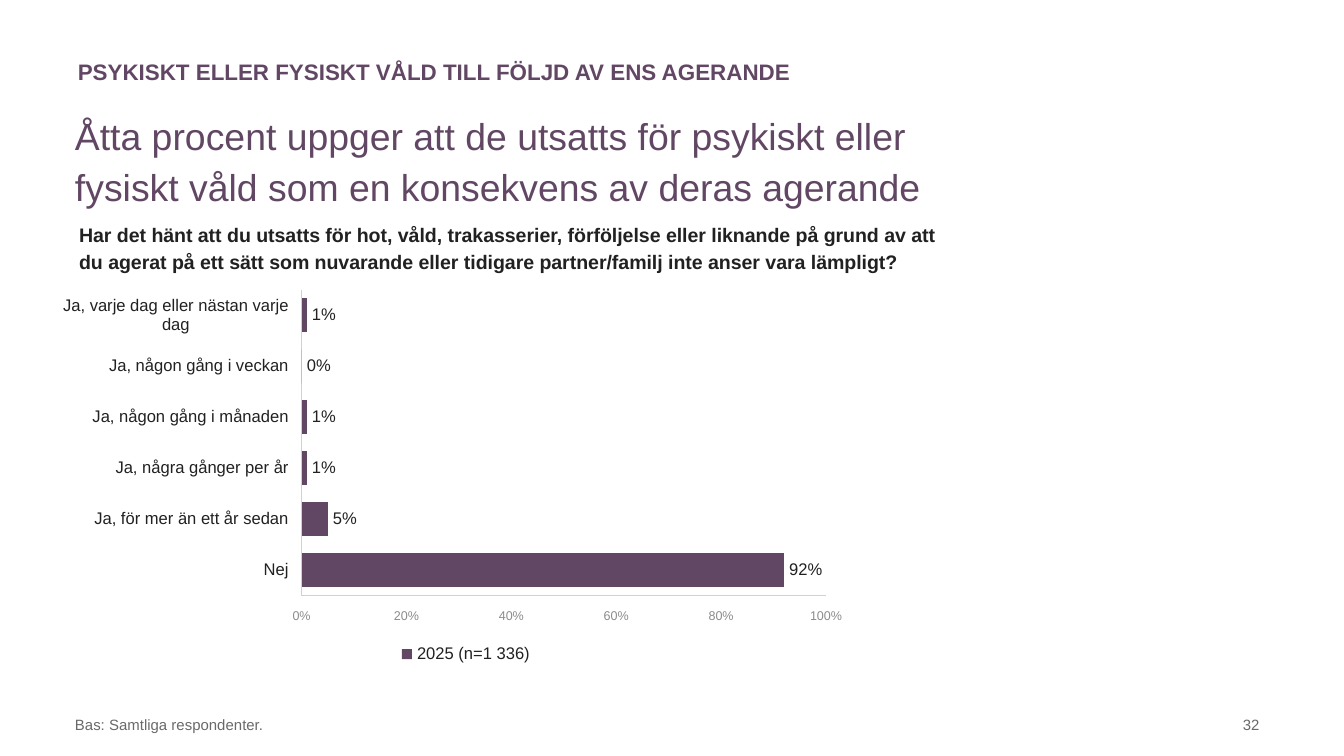
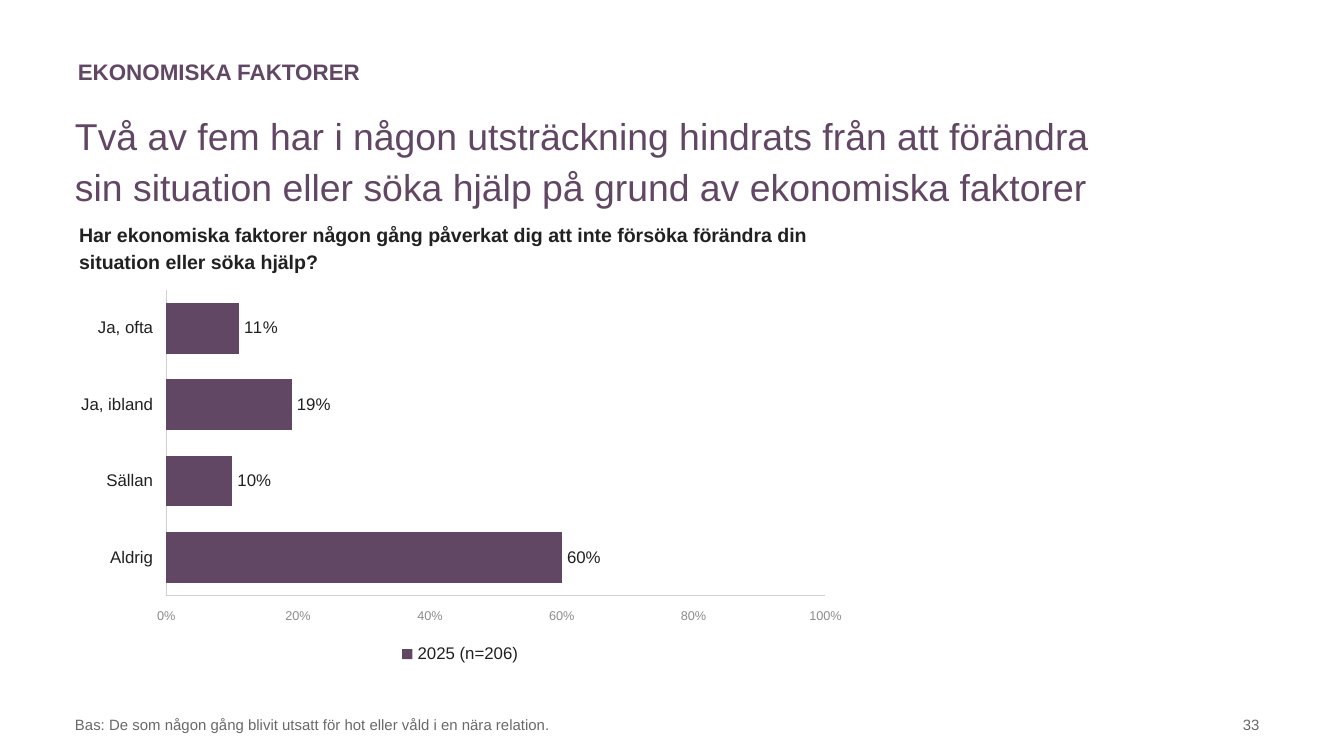
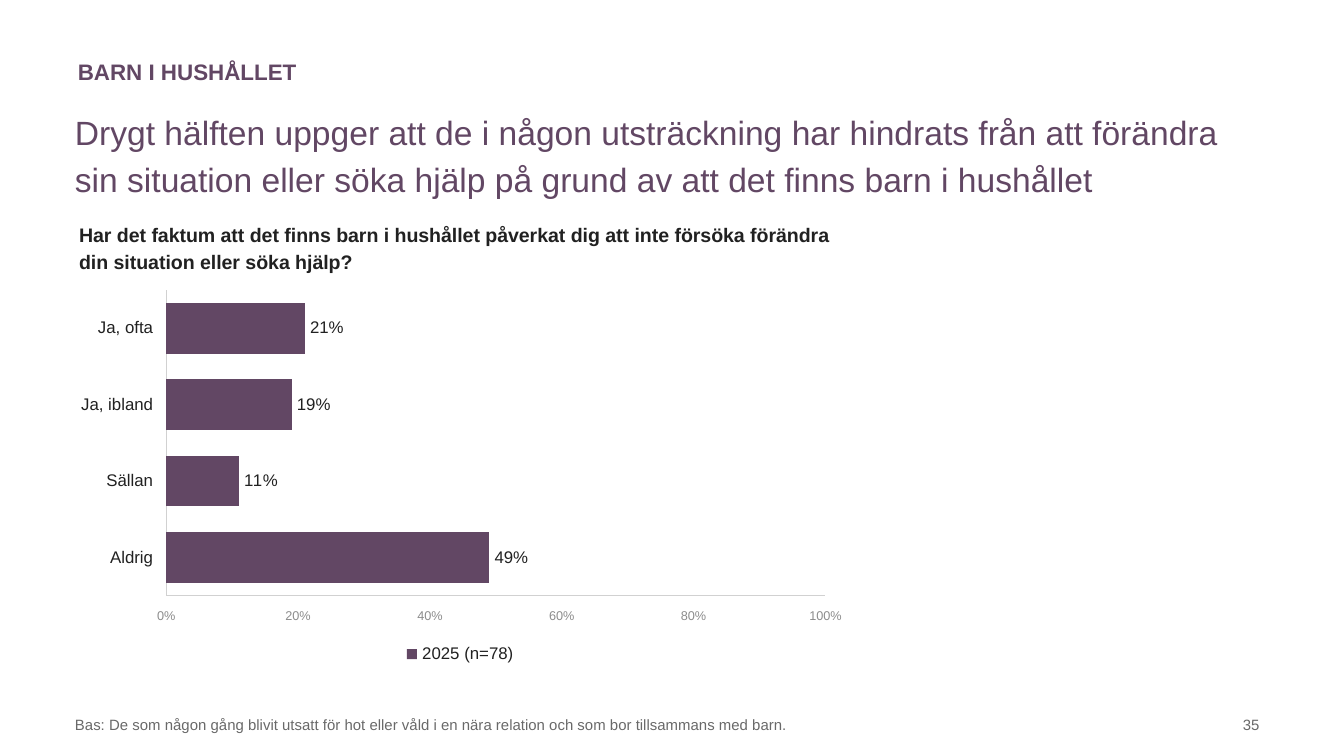
import pptx
import pptx.chart.data
import pptx.dml.color
import pptx.enum.chart
import pptx.enum.text
import pptx.oxml
import pptx.oxml.ns
import pptx.util
from collections import namedtuple

Pt = pptx.util.Pt
Box = namedtuple("Box", "left top width height")
Survey = namedtuple(
    "Survey",
    "heading title title_width title_size question question_width base number series answers plot_left",
)

FONT = "Arial"
PURPLE = "624764"
INK = "212121"
GREY = "696969"
AXIS_TEXT = "8C8C8C"
AXIS_LINE = "D1D1D1"
PERCENT = "General\\%"

PAGE = Box(0, 0, 720, 405)
LEFT = 33.1
CHART_BOX = Box(33.8, 151.2, 425.5, 207.4)
PLOT_TOP, PLOT_RIGHT, PLOT_HEIGHT = 0.02, 0.96, 0.79

BOTTOM = pptx.enum.text.MSO_ANCHOR.BOTTOM
TOP = pptx.enum.text.MSO_ANCHOR.TOP
RIGHT = pptx.enum.text.PP_ALIGN.RIGHT

SURVEYS = [
    Survey(
        "PSYKISKT ELLER FYSISKT VÅLD TILL FÖLJD AV ENS AGERANDE",
        "Åtta procent uppger att de utsatts för psykiskt eller fysiskt våld "
        "som en konsekvens av deras agerande",
        514.1, 20,
        "Har det hänt att du utsatts för hot, våld, trakasserier, förföljelse eller "
        "liknande på grund av att du agerat på ett sätt som nuvarande eller tidigare "
        "partner/familj inte anser vara lämpligt?",
        476.6,
        "Bas: Samtliga respondenter.", 32, "2025 (n=1 336)",
        {
            "Nej": 92,
            "Ja, för mer än ett år sedan": 5,
            "Ja, några gånger per år": 1,
            "Ja, någon gång i månaden": 1,
            "Ja, någon gång i veckan": 0,
            "Ja, varje dag eller nästan varje dag": 1,
        },
        0.29,
    ),
    Survey(
        "EKONOMISKA FAKTORER",
        "Två av fem har i någon utsträckning hindrats från att förändra sin situation "
        "eller söka hjälp på grund av ekonomiska faktorer",
        566.6, 20,
        "Har ekonomiska faktorer någon gång påverkat dig att inte försöka förändra din "
        "situation eller söka hjälp?",
        425.5,
        "Bas: De som någon gång blivit utsatt för hot eller våld i en nära relation.",
        33, "2025 (n=206)",
        {"Aldrig": 60, "Sällan": 10, "Ja, ibland": 19, "Ja, ofta": 11},
        0.13,
    ),
    Survey(
        "BARN I HUSHÅLLET",
        "Drygt hälften uppger att de i någon utsträckning har hindrats från att förändra "
        "sin situation eller söka hjälp på grund av att det finns barn i hushållet",
        633.6, 18,
        "Har det faktum att det finns barn i hushållet påverkat dig att inte försöka "
        "förändra din situation eller söka hjälp?",
        425.5,
        "Bas: De som någon gång blivit utsatt för hot eller våld i en nära relation "
        "och som bor tillsammans med barn.",
        35, "2025 (n=78)",
        {"Aldrig": 49, "Sällan": 11, "Ja, ibland": 19, "Ja, ofta": 21},
        0.13,
    ),
]


def color(value):
    return pptx.dml.color.RGBColor.from_string(value)


def style_font(font, size, value, bold=False):
    font.name = FONT
    font.size = Pt(size)
    font.bold = bold
    font.color.rgb = color(value)


def add_text(page, box, text, size, value, bold=False, anchor=BOTTOM, align=None, spacing=None):
    frame = page.shapes.add_textbox(*map(Pt, box)).text_frame
    frame.word_wrap = True
    frame.vertical_anchor = anchor
    frame.text = text
    para = frame.paragraphs[0]
    para.alignment = align
    para.line_spacing = spacing
    style_font(para.runs[0].font, size, value, bold)


def add_header(page, survey):
    add_text(page, Box(34.6, 13.7, 514.1, 35.3), survey.heading, 12, PURPLE, bold=True)
    add_text(page, Box(LEFT, 53.3, survey.title_width, 61.9), survey.title,
             survey.title_size, PURPLE, anchor=TOP, spacing=1.15)
    add_text(page, Box(35.3, 118.1, survey.question_width, 31.7), survey.question,
             10.5, INK, bold=True, spacing=1.15)


def add_footer(page, survey):
    add_text(page, Box(LEFT, 375.1, 561.6, 21.6), survey.base, 8, GREY)
    add_text(page, Box(604.8, 375.1, 77, 21.6), str(survey.number), 8, GREY, align=RIGHT)


def style_axis(axis, size, value):
    axis.has_major_gridlines = False
    axis.major_tick_mark = axis.minor_tick_mark = pptx.enum.chart.XL_TICK_MARK.NONE
    axis.tick_label_position = pptx.enum.chart.XL_TICK_LABEL_POSITION.LOW
    axis.format.line.color.rgb = color(AXIS_LINE)
    axis.format.line.width = Pt(0.75)
    style_font(axis.tick_labels.font, size, value)


def place_plot(chart, left):
    area = chart._chartSpace.chart.plotArea
    for layout in area.findall(pptx.oxml.ns.qn("c:layout")):
        area.remove(layout)
    sizes = {"x": left, "y": PLOT_TOP, "w": round(PLOT_RIGHT - left, 2), "h": PLOT_HEIGHT}
    marks = '<c:layoutTarget val="inner"/><c:xMode val="edge"/><c:yMode val="edge"/>'
    marks += "".join(f'<c:{side} val="{size}"/>' for side, size in sizes.items())
    area.insert(0, pptx.oxml.parse_xml(
        f'<c:layout {pptx.oxml.ns.nsdecls("c")}><c:manualLayout>{marks}</c:manualLayout></c:layout>'))


def add_answer_chart(page, box, survey):
    data = pptx.chart.data.CategoryChartData(number_format=PERCENT)
    data.categories = list(survey.answers)
    data.add_series(survey.series, list(survey.answers.values()))
    chart = page.shapes.add_chart(
        pptx.enum.chart.XL_CHART_TYPE.BAR_CLUSTERED, *map(Pt, box), data).chart
    style_font(chart.font, 10, INK)
    chart.has_title = False
    chart.has_legend = True
    chart.legend.position = pptx.enum.chart.XL_LEGEND_POSITION.BOTTOM
    chart.legend.include_in_layout = False
    style_font(chart.legend.font, 9, INK)

    style_axis(chart.category_axis, 9, INK)
    scale = chart.value_axis
    style_axis(scale, 6.8, AXIS_TEXT)
    scale.minimum_scale, scale.maximum_scale, scale.major_unit = 0, 100, 20
    scale.tick_labels.number_format = PERCENT
    scale.tick_labels.number_format_is_linked = False

    plot = chart.plots[0]
    plot.gap_width = 50
    plot.overlap = -16
    plot.vary_by_categories = False
    bars = plot.series[0]
    bars.format.fill.solid()
    bars.format.fill.fore_color.rgb = color(PURPLE)
    labels = bars.data_labels
    labels.show_value = True
    labels.number_format = PERCENT
    labels.number_format_is_linked = False
    labels.position = pptx.enum.chart.XL_LABEL_POSITION.OUTSIDE_END
    style_font(labels.font, 9, INK)
    place_plot(chart, survey.plot_left)


def add_survey_page(deck, survey):
    page = deck.slides.add_slide(deck.slide_layouts[6])
    add_header(page, survey)
    add_footer(page, survey)
    add_answer_chart(page, CHART_BOX, survey)


def main():
    deck = pptx.Presentation()
    deck.slide_width = Pt(PAGE.width)
    deck.slide_height = Pt(PAGE.height)
    for survey in SURVEYS:
        add_survey_page(deck, survey)
    deck.save("out.pptx")


if __name__ == "__main__":
    main()
